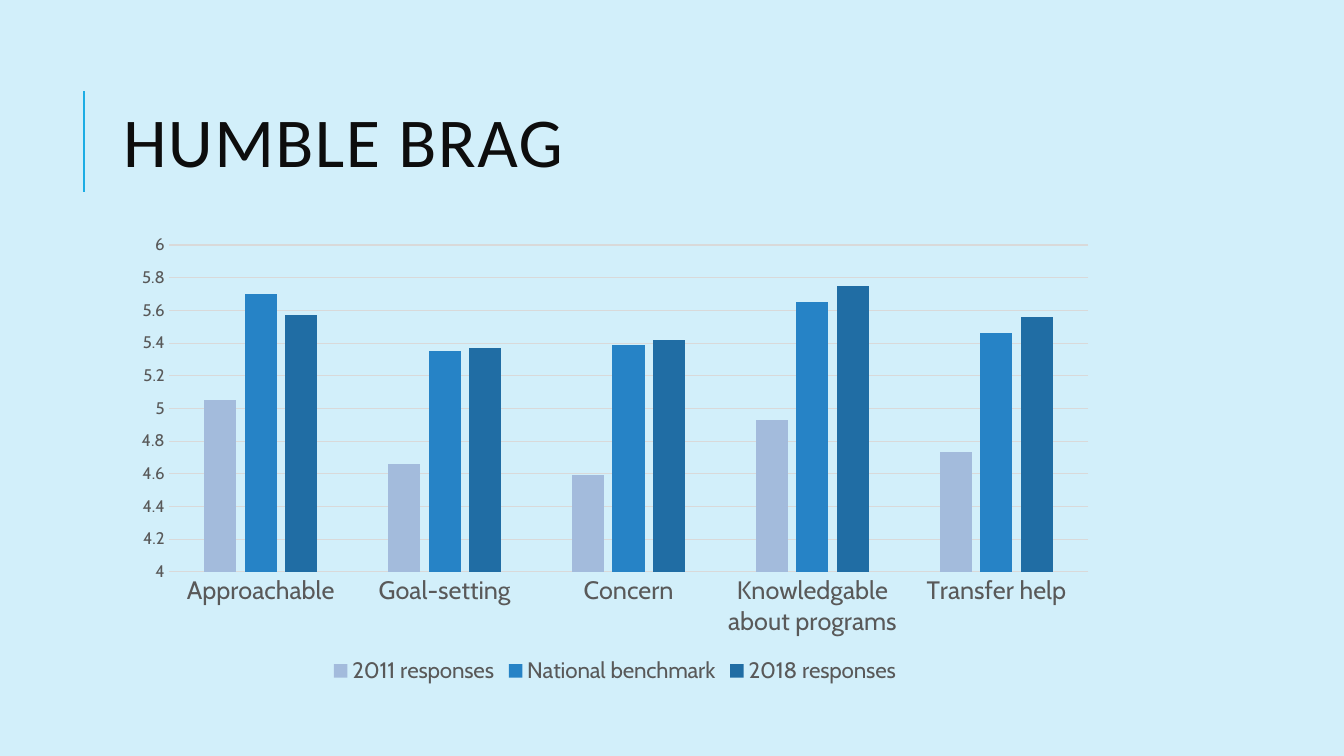
from pptx import Presentation
from pptx.chart.data import CategoryChartData
from pptx.dml.color import RGBColor
from pptx.enum.chart import XL_CHART_TYPE, XL_LEGEND_POSITION, XL_TICK_MARK
from pptx.enum.shapes import MSO_CONNECTOR
from pptx.enum.text import MSO_ANCHOR, MSO_AUTO_SIZE, PP_ALIGN
from pptx.oxml.ns import qn
from pptx.util import Inches, Pt
from lxml.etree import SubElement

PALE_BLUE = RGBColor(0xD2, 0xEF, 0xFA)
ACCENT = RGBColor(0x1C, 0xAD, 0xE4)
INK = RGBColor(0x0D, 0x0D, 0x0D)
GREY = RGBColor(0x59, 0x59, 0x59)
RULE_GREY = RGBColor(0xD9, 0xD9, 0xD9)
LAVENDER = RGBColor(0xA3, 0xBB, 0xDC)
BLUE = RGBColor(0x26, 0x83, 0xC6)
DARK_BLUE = RGBColor(0x20, 0x6D, 0xA4)

TOPICS = ["Approachable", "Goal-setting", "Concern",
          "Knowledgable about programs", "Transfer help"]
SURVEYS = [
    ("2011 responses", [5.05, 4.66, 4.59, 4.93, 4.73], LAVENDER),
    ("National benchmark", [5.7, 5.35, 5.39, 5.65, 5.46], BLUE),
    ("2018 responses", [5.57, 5.37, 5.42, 5.75, 5.56], DARK_BLUE),
]

deck = Presentation()
deck.slide_width, deck.slide_height = Inches(13.33), Inches(7.5)
slide = deck.slides.add_slide(deck.slide_layouts[5])
slide.background.fill.solid()
slide.background.fill.fore_color.rgb = PALE_BLUE

accent_bar = slide.shapes.add_connector(
    MSO_CONNECTOR.STRAIGHT, Inches(0.83), Inches(1.9), Inches(0.83), Inches(0.9))
accent_bar.line.color.rgb = ACCENT
accent_bar.line.width = Pt(1.5)
SubElement(accent_bar._element.spPr, qn("a:effectLst"))

title = slide.shapes.title
title.left, title.top = Inches(1.12), Inches(0.64)
title.width, title.height = Inches(10.63), Inches(1.64)
heading = title.text_frame
heading.text = "HUMBLE BRAG"
heading.word_wrap = True
heading.auto_size = MSO_AUTO_SIZE.NONE
heading.vertical_anchor = MSO_ANCHOR.MIDDLE
heading.paragraphs[0].alignment = PP_ALIGN.LEFT
heading.paragraphs[0].line_spacing = 0.8
heading_run = heading.paragraphs[0].runs[0]
heading_run.font.color.rgb = INK
heading_run.font._element.set("spc", "100")

ratings = CategoryChartData()
ratings.categories = TOPICS
for survey, scores, _ in SURVEYS:
    ratings.add_series(survey, scores)
chart = slide.shapes.add_chart(
    XL_CHART_TYPE.COLUMN_CLUSTERED, Inches(1.21), Inches(2.24),
    Inches(9.78), Inches(4.59), ratings).chart
chart.has_title = False
chart.has_legend = True
chart.legend.position = XL_LEGEND_POSITION.BOTTOM
chart.legend.include_in_layout = False

columns = chart.plots[0]
columns.gap_width, columns.overlap = 219, -27
columns.vary_by_categories = False
for series, (_, _, color) in zip(columns.series, SURVEYS):
    series.format.fill.solid()
    series.format.fill.fore_color.rgb = color
    series.invert_if_negative = False

topics, scale = chart.category_axis, chart.value_axis
for axis in (topics, scale):
    axis.major_tick_mark = axis.minor_tick_mark = XL_TICK_MARK.NONE
scale.minimum_scale, scale.maximum_scale, scale.major_unit = 4, 6, 0.2
scale.has_major_gridlines = True
scale.format.line.fill.background()
for rule in (topics.format.line, scale.major_gridlines.format.line):
    rule.color.rgb = RULE_GREY
    rule.width = Pt(0.75)

for font, size in ((chart.font, 10), (topics.tick_labels.font, 18),
                   (scale.tick_labels.font, 12), (chart.legend.font, 16)):
    font.color.rgb = GREY
    for attribute, value in {"name": "Cabin", "size": Pt(size), "bold": False}.items():
        setattr(font, attribute, value)
for attribute, value in {"name": "Calibri", "size": Pt(50), "bold": False}.items():
    setattr(heading_run.font, attribute, value)

deck.save("out.pptx")
